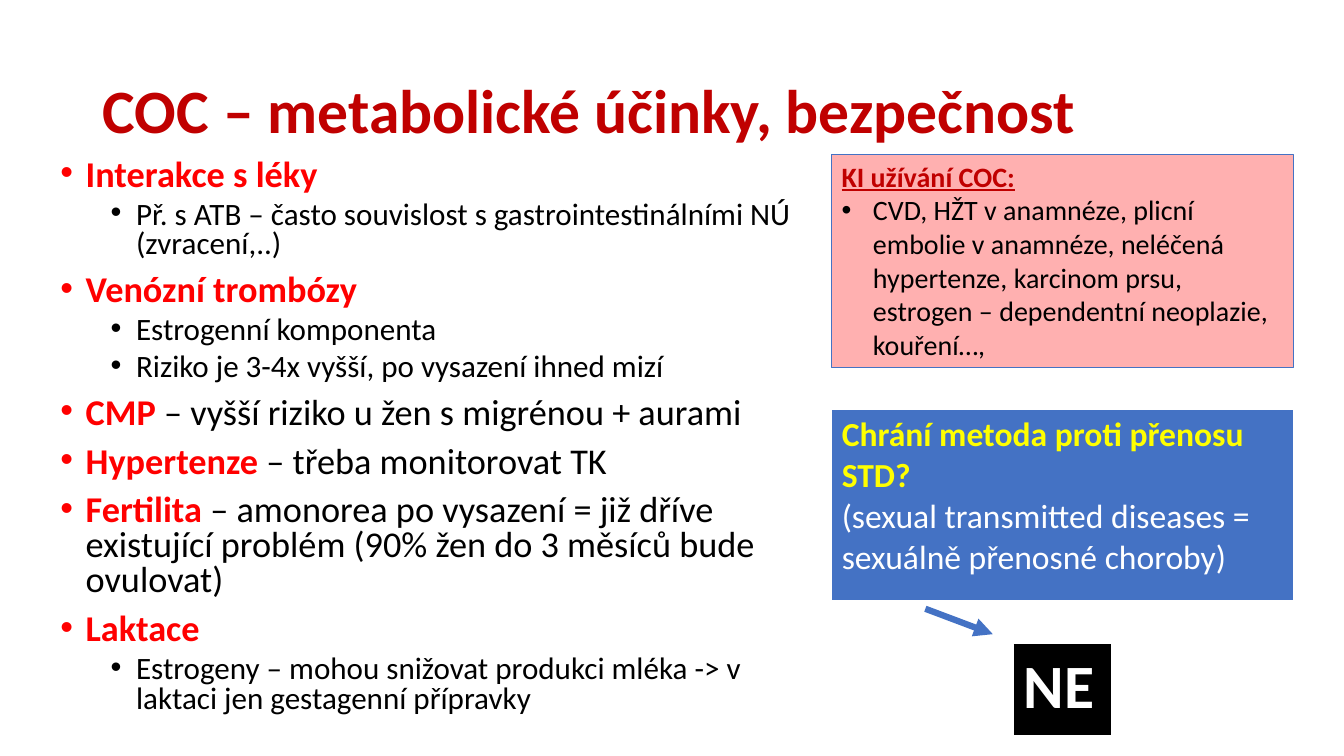
from lxml.etree import SubElement
from pptx import Presentation
from pptx.dml.color import RGBColor
from pptx.enum.shapes import MSO_CONNECTOR as Connector, MSO_SHAPE as Shape
from pptx.enum.text import MSO_ANCHOR as Anchor, MSO_AUTO_SIZE as AutoSize, PP_ALIGN as Align
from pptx.oxml.ns import qn
from pptx.util import Cm, Pt

COLORS = {"title": "C00000", "key": "FF0000", "text": "000000", "blue": "4472C4",
          "yellow": "FFFF00", "white": "FFFFFF"}


def add_para(frame, spans, size, indent=None, hanging=0.64, **layout):
    """Fill the empty first paragraph or append one; spans are (text, color, format)."""
    first = not frame.paragraphs[0].runs
    para = frame.paragraphs[0] if first else frame.add_paragraph()
    para.alignment = Align.LEFT
    if indent:
        props = para._p.get_or_add_pPr()
        props.set("marL", str(Cm(indent)))
        props.set("indent", str(-Cm(hanging)))
        SubElement(props, qn("a:buFont")).set("typeface", "Arial")
        SubElement(props, qn("a:buChar")).set("char", "•")
    if first:
        layout["space_before"] = Pt(0)
    for name, value in layout.items():
        setattr(para, name, value)
    for text, color, style in spans:
        span = para.add_run()
        span.text = text
        for name, value in {"name": "Calibri", "size": Pt(size), **style}.items():
            setattr(span.font, name, value)
        span.font.color.rgb = RGBColor.from_string(COLORS[color])


def add_cell_table(left, top, width, height, fill, borders):
    """Add a one-cell table; borders maps a side to (color, points)."""
    table = page.shapes.add_table(1, 1, Cm(left), Cm(top), Cm(width), Cm(height)).table
    table.first_row = table.horz_banding = False
    cell = table.cell(0, 0)
    props = cell._tc.get_or_add_tcPr()
    for side in "LRTB":
        line = SubElement(props, qn(f"a:ln{side}"))
        if side in borders:
            color, points = borders[side]
            line.set("w", str(Pt(points)))
            paint = SubElement(line, qn("a:solidFill"))
            SubElement(paint, qn("a:srgbClr")).set("val", COLORS[color])
        else:
            SubElement(line, qn("a:noFill"))
    cell.fill.solid()
    cell.fill.fore_color.rgb = RGBColor.from_string(COLORS[fill])
    return cell.text_frame


deck = Presentation()
deck.slide_width, deck.slide_height = Cm(33.87), Cm(19.05)
page = deck.slides.add_slide(deck.slide_layouts[6])
BOLD = {"bold": True}
PLAIN = {"bold": False}

# Title
title = page.shapes.add_textbox(Cm(2.34), Cm(1.02), Cm(29.21), Cm(3.68)).text_frame
title.word_wrap = True
title.vertical_anchor = Anchor.MIDDLE
add_para(title, [("COC – metabolické účinky, bezpečnost", "title", BOLD)], 44, line_spacing=0.9)

# Effects: level, red key words, black text
effects = [
    (0, "Interakce s léky", ""),
    (1, "", "Př. s ATB – často souvislost s gastrointestinálními NÚ (zvracení,..)"),
    (0, "Venózní trombózy", ""),
    (1, "", "Estrogenní komponenta"),
    (1, "", "Riziko je 3-4x vyšší, po vysazení ihned mizí"),
    (0, "CMP ", "– vyšší riziko u žen s migrénou + aurami"),
    (0, "Hypertenze ", "– třeba monitorovat TK"),
    (0, "Fertilita", " – amonorea po vysazení = již dříve existující problém "
                     "(90% žen do 3 měsíců bude ovulovat)"),
    (0, "Laktace", ""),
    (1, "", "Estrogeny – mohou snižovat produkci mléka -> v laktaci jen gestagenní přípravky"),
]
body = page.shapes.add_textbox(Cm(1.27), Cm(3.89), Cm(19.69), Cm(14.61)).text_frame
body.word_wrap = True
for level, key, text in effects:
    spans = [span for span in ((key, "key", BOLD), (text, "text", PLAIN)) if span[0]]
    add_para(body, spans, (25.9, 22.2)[level], indent=(0.64, 1.91)[level],
             level=level, line_spacing=0.8, space_before=Pt((10, 5)[level]))

# Contraindications
box = page.shapes.add_shape(Shape.RECTANGLE, Cm(20.96), Cm(3.89), Cm(11.63), Cm(5.38))
box.shadow.inherit = False
box.fill.solid()
box.fill.fore_color.rgb = RGBColor.from_string(COLORS["key"])
tint = box._element.spPr.find(qn("a:solidFill"))[0]
SubElement(tint, qn("a:alpha")).set("val", "31000")
box.line.color.rgb = RGBColor.from_string(COLORS["blue"])
box.line.width = Pt(0.75)
frame = box.text_frame
frame.word_wrap = True
frame.auto_size = AutoSize.SHAPE_TO_FIT_TEXT
frame.vertical_anchor = Anchor.TOP
add_para(frame, [("KI užívání COC:", "title", {"bold": True, "underline": True})], 20)
add_para(frame, [("CVD, HŽT v anamnéze, plicní embolie v anamnéze, neléčená hypertenze, "
                  "karcinom prsu, estrogen – dependentní neoplazie, kouření…,", "text", PLAIN)],
         20, indent=0.79, hanging=0.79)

# Question and answer
question = add_cell_table(20.96, 10.31, 11.63, 4.85, "blue",
                          {"L": ("white", 1), "R": ("white", 1),
                           "T": ("white", 1), "B": ("white", 3)})
for text, color, style in [
    ("Chrání metoda proti přenosu", "yellow", BOLD),
    ("STD?", "yellow", BOLD),
    ("(sexual transmitted diseases = sexuálně přenosné choroby)", "white", PLAIN),
]:
    add_para(question, [(text, color, style)], 24)
answer = add_cell_table(25.55, 16.26, 2.46, 2.24, "text", {"T": ("text", 2), "B": ("text", 2)})
add_para(answer, [("NE", "white", BOLD)], 44)

# Arrow from question to answer
arrow = page.shapes.add_connector(Connector.STRAIGHT, Cm(23.32), Cm(15.34), Cm(25.02), Cm(15.98))
arrow.line.color.rgb = RGBColor.from_string(COLORS["blue"])
arrow.line.width = Pt(4.5)
SubElement(arrow.line._get_or_add_ln(), qn("a:tailEnd")).set("type", "triangle")
SubElement(arrow._element.spPr, qn("a:effectLst"))

deck.save("out.pptx")
